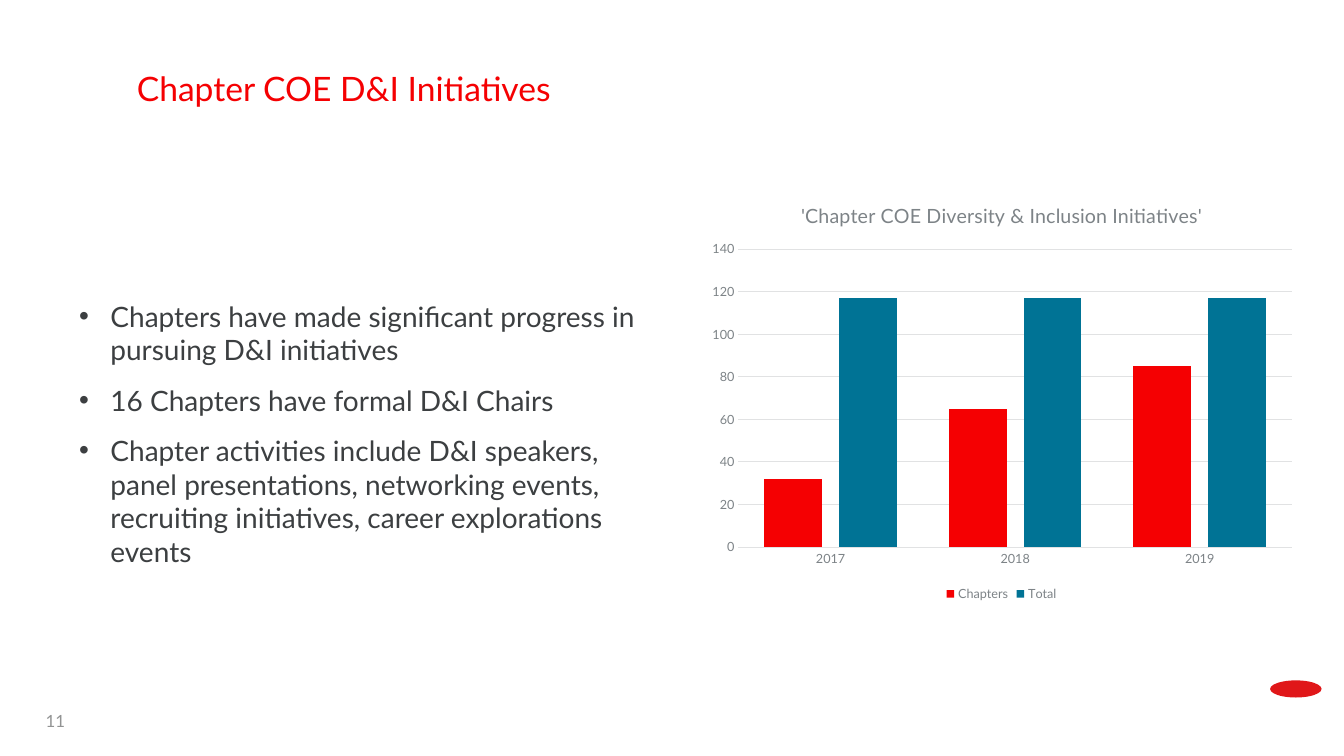
from lxml import etree
from pptx import Presentation
from pptx.chart.data import CategoryChartData
from pptx.dml.color import RGBColor
from pptx.enum.chart import XL_CHART_TYPE, XL_LEGEND_POSITION, XL_TICK_MARK
from pptx.enum.shapes import MSO_SHAPE
from pptx.enum.text import MSO_ANCHOR, PP_ALIGN
from pptx.oxml.ns import qn
from pptx.util import Inches, Pt

COLUMNS = XL_CHART_TYPE.COLUMN_CLUSTERED
LEGEND_BOTTOM = XL_LEGEND_POSITION.BOTTOM
NO_TICK = XL_TICK_MARK.NONE
OVAL = MSO_SHAPE.OVAL
TOP, MIDDLE = MSO_ANCHOR.TOP, MSO_ANCHOR.MIDDLE
LEFT, CENTER, RIGHT = PP_ALIGN.LEFT, PP_ALIGN.CENTER, PP_ALIGN.RIGHT

THEME = {
    "font": "Lato",
    "red": RGBColor.from_string("F50002"),
    "teal": RGBColor.from_string("007395"),
    "mark": RGBColor.from_string("E01719"),
    "body": RGBColor.from_string("3C3F41"),
    "label": RGBColor.from_string("7D8387"),
    "number": RGBColor.from_string("929393"),
    "grid": RGBColor.from_string("E1E2E3"),
    "title_size": Pt(24),
    "body_size": Pt(20),
    "chart_title_size": Pt(14),
    "number_size": Pt(12),
    "label_size": Pt(9),
    "hairline": Pt(0.75),
}

deck = Presentation()
deck.slide_width, deck.slide_height = Inches(13.33), Inches(7.5)
page = deck.slides.add_slide(deck.slide_layouts[6])


def area(left, top, width, height):
    """Turn percentages of the slide's size into lengths."""
    across, down = deck.slide_width / 100, deck.slide_height / 100
    return [round(left * across), round(top * down),
            round(width * across), round(height * down)]


def add_text(lines, place, size, color, align=LEFT, anchor=TOP,
             inset=0.1, spacing=1.0, gap=0, bullet_indent=0):
    """Add a text box with one paragraph per line; gap parts the paragraphs."""
    frame = page.shapes.add_textbox(*area(*place)).text_frame
    frame.word_wrap = True
    frame.vertical_anchor = anchor
    frame.margin_left = frame.margin_right = Inches(inset)
    frame.margin_top = frame.margin_bottom = Inches(inset / 2)
    for index, line in enumerate(lines):
        para = frame.paragraphs[0] if index == 0 else frame.add_paragraph()
        para.alignment = align
        para.line_spacing = spacing
        if index:
            para.space_before = Pt(gap)
        if bullet_indent:
            properties = para._p.get_or_add_pPr()
            properties.set("marL", str(Inches(bullet_indent)))
            properties.set("indent", str(-Inches(bullet_indent)))
            etree.SubElement(properties, qn("a:buFont")).set("typeface", "Arial")
            etree.SubElement(properties, qn("a:buChar")).set("char", "•")
        span = para.add_run()
        span.text = line
        span.font.name = THEME["font"]
        span.font.size = size
        span.font.color.rgb = color


# Corner mark
mark = page.shapes.add_shape(OVAL, *area(94.5, 90, 3.83, 2.27))
mark.shadow.inherit = False
mark.fill.solid()
mark.fill.fore_color.rgb = THEME["mark"]
mark.line.fill.background()

# Text
add_text(["Chapter COE D&I Initiatives"], (3.7, 9.6, 43.75, 5.6),
         THEME["title_size"], THEME["red"], align=CENTER, inset=0, spacing=0.9)
add_text(
    [
        "Chapters have made significant progress in pursuing D&I initiatives",
        "16 Chapters have formal D&I Chairs",
        "Chapter activities include D&I speakers, panel presentations, "
        "networking events, recruiting initiatives, career explorations events",
    ],
    (5.15, 29, 43.75, 56.67), THEME["body_size"], THEME["body"],
    anchor=MIDDLE, gap=12, bullet_indent=0.31)
add_text(["11"], (1.83, 92.67, 3.75, 5.33), THEME["number_size"],
         THEME["number"], align=RIGHT, anchor=MIDDLE)

# Chart
initiatives = CategoryChartData()
initiatives.categories = ["2017", "2018", "2019"]
initiatives.add_series("Chapters", [32, 65, 85])
initiatives.add_series("Total", [117, 117, 117])
chart = page.shapes.add_chart(
    COLUMNS, *area(52.06, 24.4, 44.93, 55.73), initiatives).chart
chart.font.name = THEME["font"]
chart.font.size = THEME["label_size"]
chart.font.color.rgb = THEME["label"]

chart.has_title = True
title_frame = chart.chart_title.text_frame
title_frame.text = "'Chapter COE Diversity & Inclusion Initiatives'"
title_font = title_frame.paragraphs[0].runs[0].font
title_font.name = THEME["font"]
title_font.size = THEME["chart_title_size"]
title_font.bold = False
title_font.color.rgb = THEME["label"]

chart.has_legend = True
chart.legend.position = LEGEND_BOTTOM
chart.legend.include_in_layout = False

plot = chart.plots[0]
plot.vary_by_categories = False
plot.gap_width, plot.overlap = 90, -30
for series, color in zip(plot.series, (THEME["red"], THEME["teal"])):
    series.format.fill.solid()
    series.format.fill.fore_color.rgb = color

year_axis, count_axis = chart.category_axis, chart.value_axis
for axis in (year_axis, count_axis):
    axis.major_tick_mark = axis.minor_tick_mark = NO_TICK
count_axis.minimum_scale, count_axis.maximum_scale = 0, 140
count_axis.major_unit = 20
count_axis.format.line.fill.background()
for line in (year_axis.format.line, count_axis.major_gridlines.format.line):
    line.color.rgb = THEME["grid"]
    line.width = THEME["hairline"]

# Positions inside the chart, as percentages of its size
chart_root = chart._chartSpace
layouts = [
    ("c:chart/c:title", 1, {}, {"x": 16.2, "y": 3.1}),
    ("c:chart/c:plotArea", 0, {"layoutTarget": "inner"},
     {"x": 6.4, "y": 15.4, "w": 91.7, "h": 70.7}),
]
for target, position, kind, shares in layouts:
    parent = chart_root.xpath(target)[0]
    for previous in parent.findall(qn("c:layout")):
        parent.remove(previous)
    layout = etree.Element(qn("c:layout"))
    manual = etree.SubElement(layout, qn("c:manualLayout"))
    settings = {**kind, "xMode": "edge", "yMode": "edge"}
    settings.update({name: share / 100 for name, share in shares.items()})
    for name, value in settings.items():
        etree.SubElement(manual, qn("c:" + name)).set("val", str(value))
    parent.insert(position, layout)

deck.save("out.pptx")
